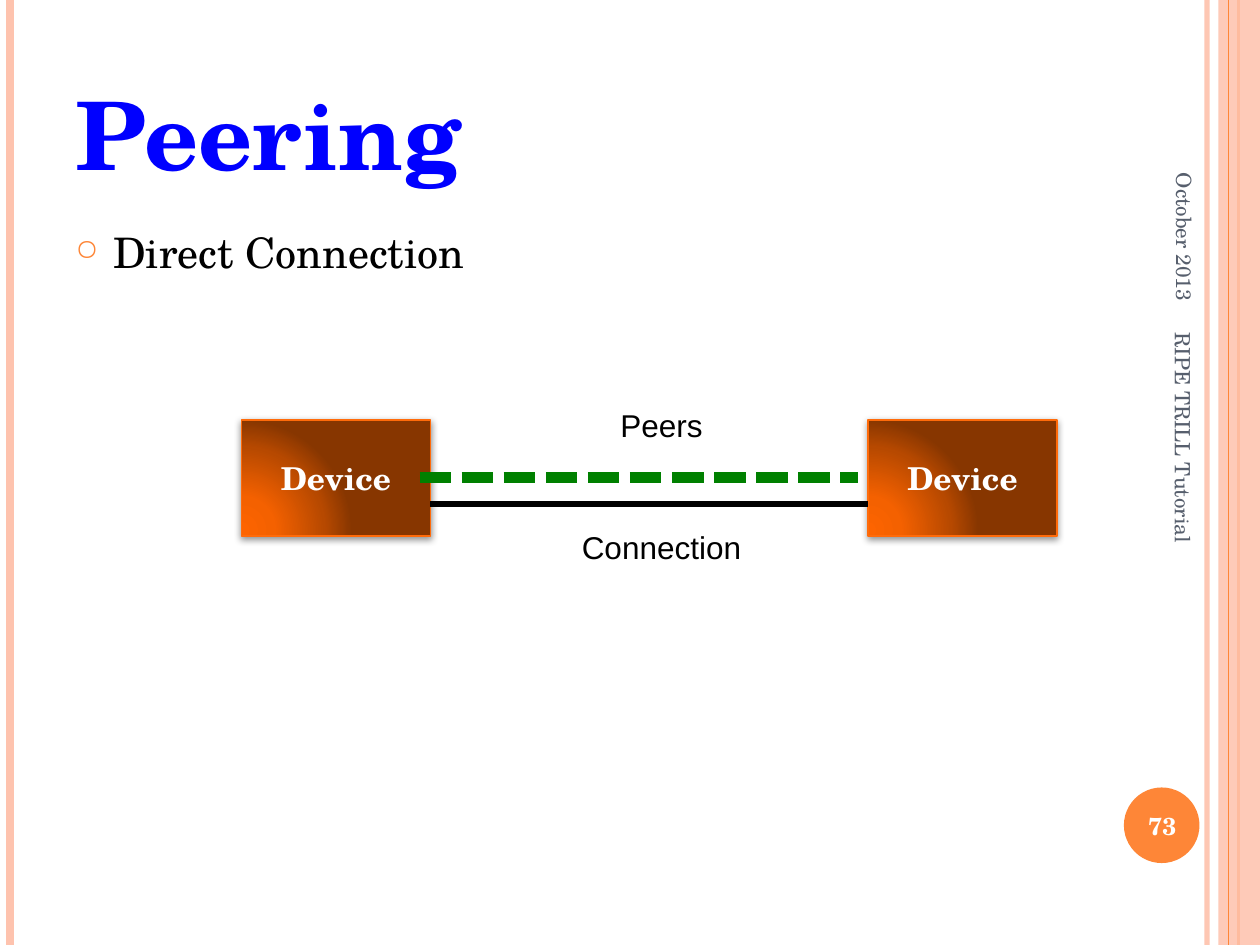
from dataclasses import dataclass
from typing import Optional

import pptx
import pptx.dml.color
import pptx.enum.dml
import pptx.enum.shapes
import pptx.enum.text
import pptx.oxml
import pptx.oxml.ns
import pptx.util
from lxml import etree

Pt = pptx.util.Pt
RGBColor = pptx.dml.color.RGBColor
Align = pptx.enum.text.PP_ALIGN
Anchor = pptx.enum.text.MSO_ANCHOR
Preset = pptx.enum.shapes.MSO_SHAPE
Dash = pptx.enum.dml.MSO_LINE

PEACH = RGBColor(0xFE, 0xC3, 0xAE)
ORANGE = RGBColor(0xFE, 0x86, 0x37)
EDGE_ORANGE = RGBColor(0xFF, 0x6B, 0x0A)
BLUE = RGBColor(0x00, 0x00, 0xFF)
GREEN = RGBColor(0x00, 0x80, 0x00)
SLATE = RGBColor(0x57, 0x5F, 0x6D)
BLACK = RGBColor(0x00, 0x00, 0x00)
WHITE = RGBColor(0xFF, 0xFF, 0xFF)
GLOW = [
    (0, RGBColor(0xFD, 0x64, 0x00)),
    (30, RGBColor(0xF4, 0x61, 0x00)),
    (75, RGBColor(0xB7, 0x49, 0x00)),
    (100, RGBColor(0x87, 0x36, 0x00)),
]

SERIF = "TeX Gyre Schola"
SANS = "Arial"
WIDTH, HEIGHT = 720, 540
NAMESPACE = pptx.oxml.ns.nsdecls("a")


@dataclass(frozen=True)
class Box:
    left: float
    top: float
    width: float
    height: float

    def lengths(self) -> list:
        return [Pt(v) for v in (self.left, self.top, self.width, self.height)]


@dataclass(frozen=True)
class Style:
    size: float
    color: RGBColor
    font: str = SERIF
    bold: bool = False
    align: Align = Align.LEFT
    anchor: Anchor = Anchor.MIDDLE


@dataclass(frozen=True)
class Label:
    text: str
    box: Box
    style: Style
    rotation: float = 0


@dataclass(frozen=True)
class Rule:
    start: tuple
    end: tuple
    color: RGBColor
    weight: float
    dash: Optional[Dash] = None
    opacity: int = 100


def upright(x: float, color: RGBColor, weight: float, opacity: int = 100) -> Rule:
    return Rule((x, 0), (x, HEIGHT), color, weight, opacity=opacity)


DEVICE_STYLE = Style(18, WHITE, bold=True, align=Align.CENTER)
CAPTION_STYLE = Style(18, BLACK, SANS, align=Align.CENTER, anchor=Anchor.TOP)

FRAME_RULES = [
    upright(689.76, PEACH, 3, 93),
    upright(5.76, PEACH, 4.5),
    upright(707.76, ORANGE, 1.5),
]
INNER_RULE = upright(702, ORANGE, 0.75)
TITLE = Label("Peering", Box(36, 21.6, 588, 90),
              Style(54, BLUE, bold=True, anchor=Anchor.BOTTOM))
BULLET = Label("Direct Connection", Box(36, 126, 588, 53.28),
               Style(24, BLACK, anchor=Anchor.TOP))
FOOTERS = [
    Label("October 2013", Box(597.6, 84.96, 158.4, 30.24),
          Style(12, SLATE, align=Align.RIGHT), 90),
    Label("RIPE TRILL Tutorial", Box(550.08, 294.48, 252, 28.8), Style(12, SLATE), 90),
    Label("73", Box(640.08, 451.44, 48.24, 41.04),
          Style(14, WHITE, bold=True, align=Align.CENTER)),
]
DEVICES = [Label("Device", Box(left, 240, 108, 66.24), DEVICE_STYLE)
           for left in (138, 496)]
LINKS = [
    Rule((246, 288), (496, 288), BLACK, 3),
    Rule((239.76, 272.88), (490.32, 272.88), GREEN, 6, Dash.SQUARE_DOT),
]
CAPTIONS = [Label(text, Box(324, top, 108, 28.8), CAPTION_STYLE)
            for text, top in (("Peers", 228.24), ("Connection", 298.08))]


def set_opacity(properties, percent: int) -> None:
    color = properties.find(".//" + pptx.oxml.ns.qn("a:srgbClr"))
    etree.SubElement(color, pptx.oxml.ns.qn("a:alpha")).set("val", str(percent * 1000))


def write(shape, label: Label) -> None:
    style, frame = label.style, shape.text_frame
    frame.text = label.text
    frame.word_wrap = True
    frame.auto_size = pptx.enum.text.MSO_AUTO_SIZE.NONE
    frame.vertical_anchor = style.anchor
    paragraph = frame.paragraphs[0]
    paragraph.alignment = style.align
    font = paragraph.runs[0].font
    font.name, font.size, font.bold = style.font, Pt(style.size), style.bold
    font.color.rgb = style.color


def add_label(slide, label: Label):
    text_box = slide.shapes.add_textbox(*label.box.lengths())
    text_box.rotation = label.rotation
    write(text_box, label)
    return text_box


def add_rule(slide, rule: Rule) -> None:
    connector = slide.shapes.add_connector(
        pptx.enum.shapes.MSO_CONNECTOR.STRAIGHT,
        *[Pt(v) for v in rule.start + rule.end])
    connector.line.color.rgb = rule.color
    connector.line.width = Pt(rule.weight)
    if rule.dash is not None:
        connector.line.dash_style = rule.dash
    properties = connector._element.spPr
    if rule.opacity < 100:
        set_opacity(properties, rule.opacity)
    etree.SubElement(properties, pptx.oxml.ns.qn("a:effectLst"))


def add_plain(slide, preset: Preset, box: Box, color: RGBColor):
    shape = slide.shapes.add_shape(preset, *box.lengths())
    shape.shadow.inherit = False
    shape.fill.solid()
    shape.fill.fore_color.rgb = color
    shape.line.fill.background()
    return shape


def add_device(slide, device: Label) -> None:
    shape = add_plain(slide, Preset.RECTANGLE, device.box, EDGE_ORANGE)
    shape.line.color.rgb = EDGE_ORANGE
    shape.line.width = Pt(1)
    properties = shape._element.spPr
    stops = "".join(f'<a:gs pos="{position * 1000}"><a:srgbClr val="{color}"/></a:gs>'
                    for position, color in GLOW)
    gradient = pptx.oxml.parse_xml(
        f'<a:gradFill {NAMESPACE} rotWithShape="1"><a:gsLst>{stops}</a:gsLst>'
        '<a:path path="circle"><a:fillToRect l="5000" t="100000" r="120000" b="10000"/>'
        '</a:path></a:gradFill>')
    properties.replace(properties.find(pptx.oxml.ns.qn("a:solidFill")), gradient)
    properties.find(pptx.oxml.ns.qn("a:effectLst")).append(pptx.oxml.parse_xml(
        f'<a:outerShdw {NAMESPACE} blurRad="{Pt(4)}" dist="{Pt(1.6)}" dir="5400000" '
        'rotWithShape="0"><a:srgbClr val="000000"><a:alpha val="42000"/></a:srgbClr>'
        '</a:outerShdw>'))
    write(shape, device)


def add_bullet(slide, label: Label) -> None:
    paragraph = add_label(slide, label).text_frame.paragraphs[0]
    properties = paragraph._p.get_or_add_pPr()
    properties.set("marL", str(Pt(21.6)))
    properties.set("indent", str(-Pt(21.6)))
    for mark in (f'<a:buClr {NAMESPACE}><a:srgbClr val="{ORANGE}"/></a:buClr>',
                 f'<a:buSzPct {NAMESPACE} val="70000"/>',
                 f'<a:buChar {NAMESPACE} char="○"/>'):
        properties.append(pptx.oxml.parse_xml(mark))


def main() -> None:
    deck = pptx.Presentation()
    deck.slide_width, deck.slide_height = Pt(WIDTH), Pt(HEIGHT)
    slide = deck.slides.add_slide(deck.slide_layouts[5])

    for rule in FRAME_RULES:
        add_rule(slide, rule)
    band = add_plain(slide, Preset.RECTANGLE, Box(696.24, 0, 23.76, HEIGHT), PEACH)
    set_opacity(band._element.spPr, 87)
    add_rule(slide, INNER_RULE)
    add_plain(slide, Preset.OVAL, Box(642.24, 450, 43.2, 43.2), ORANGE)

    title = slide.shapes.title
    title.left, title.top, title.width, title.height = TITLE.box.lengths()
    write(title, TITLE)
    add_bullet(slide, BULLET)
    for footer in FOOTERS:
        add_label(slide, footer)

    for device in DEVICES:
        add_device(slide, device)
    for link in LINKS:
        add_rule(slide, link)
    for caption in CAPTIONS:
        add_label(slide, caption)

    deck.save("out.pptx")


if __name__ == "__main__":
    main()
